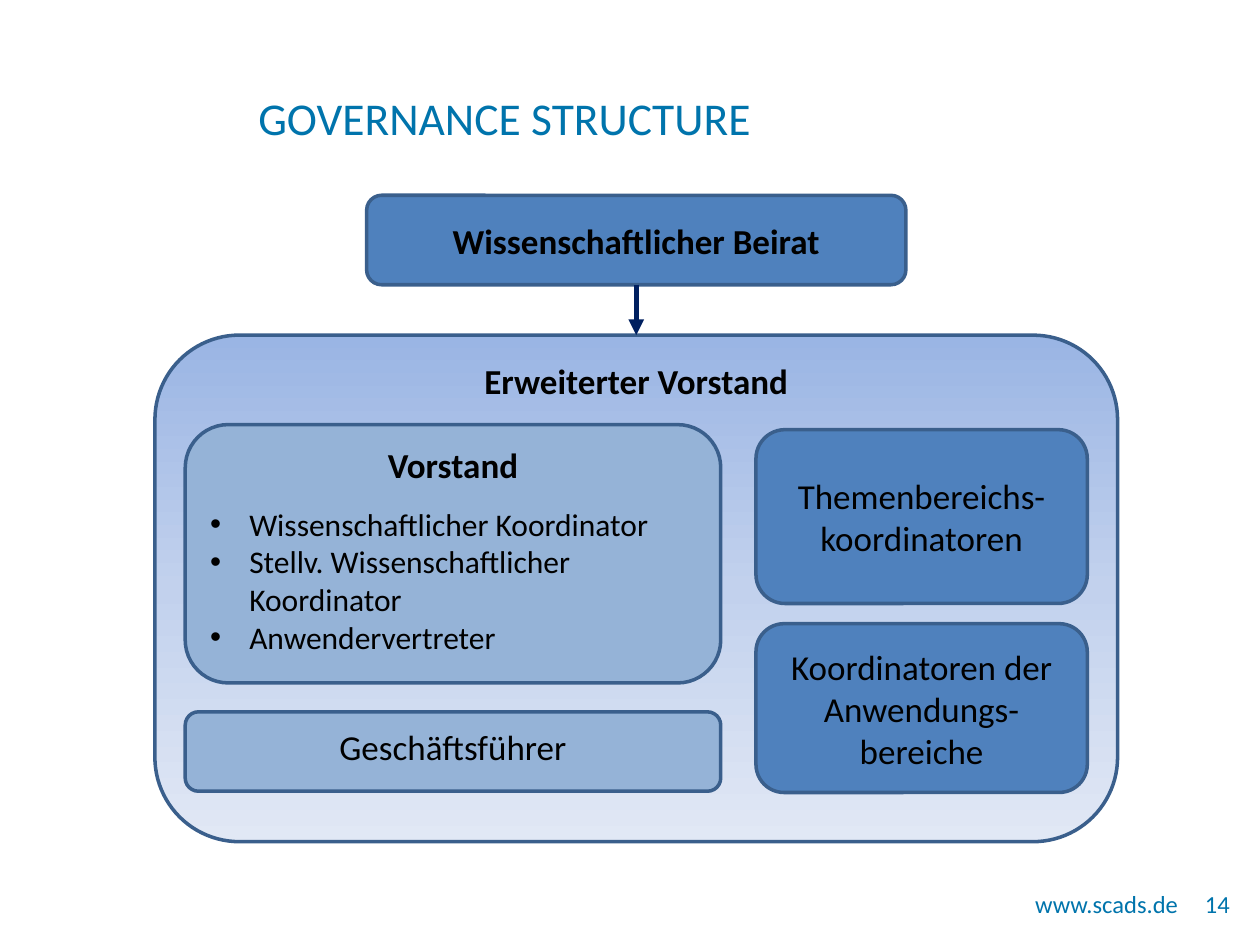
from copy import deepcopy
from dataclasses import dataclass

from lxml.etree import SubElement
from pptx import Presentation
from pptx.dml.color import RGBColor as RGB
from pptx.enum.shapes import MSO_CONNECTOR as CONNECTOR, MSO_SHAPE as SHAPE
from pptx.enum.text import MSO_ANCHOR as ANCHOR, PP_ALIGN as ALIGN
from pptx.oxml.ns import qn
from pptx.util import Inches, Pt


@dataclass(frozen=True)
class Theme:
    """Colours, font and type sizes of the slide."""
    font: str = "Calibri"
    accent: str = "0074AC"
    text: str = "000000"
    strong: str = "4F81BD"
    soft: str = "95B3D7"
    outline: str = "3A5F8C"
    arrow: str = "002060"
    gradient: tuple = ("9AB5E4", "C2D1ED", "E1E8F5")
    title_size: int = 26
    label_size: int = 20
    list_size: int = 18
    footer_size: int = 14


class SlideBuilder:
    """Draws styled elements on the current slide."""

    def __init__(self, slide, theme):
        """Keep the slide and its theme."""
        self.slide = slide
        self.theme = theme

    def set_frame(self, frame, anchor, insets):
        """Set wrapping, anchor and insets of a text frame."""
        left, top, right, bottom = map(Inches, insets)
        values = {"word_wrap": True, "vertical_anchor": anchor,
                  "margin_left": left, "margin_top": top,
                  "margin_right": right, "margin_bottom": bottom}
        for name, value in values.items():
            setattr(frame, name, value)

    def add_span(self, para, text, size, color, align, bold=False):
        """Fill a paragraph with one styled span."""
        para.alignment = align
        span = para.add_run()
        span.text = text
        values = {"name": self.theme.font, "size": Pt(size), "bold": bold}
        for name, value in values.items():
            setattr(span.font, name, value)
        span.font.color.rgb = RGB.from_string(color)

    def text(self, area, text, size, align=ALIGN.RIGHT):
        """Add accent text standing on the bottom of its area."""
        frame = self.slide.shapes.add_textbox(*map(Inches, area)).text_frame
        self.set_frame(frame, ANCHOR.BOTTOM, (0, 0, 0, 0))
        self.add_span(frame.paragraphs[0], text, size, self.theme.accent, align)

    def box(self, area, lines, fill, bold=False, anchor=ANCHOR.MIDDLE,
            insets=(0.1, 0.05, 0.1, 0.05)):
        """Add a rounded box with centred lines."""
        box = self.slide.shapes.add_shape(SHAPE.ROUNDED_RECTANGLE, *map(Inches, area))
        box.shadow.inherit = False
        box.line.color.rgb = RGB.from_string(self.theme.outline)
        box.line.width = Pt(2)
        if isinstance(fill, tuple):
            self.shade(box, fill)
        else:
            box.fill.solid()
            box.fill.fore_color.rgb = RGB.from_string(fill)
        frame = box.text_frame
        self.set_frame(frame, anchor, insets)
        for index, line in enumerate(lines):
            para = frame.add_paragraph() if index else frame.paragraphs[0]
            self.add_span(para, line, self.theme.label_size, self.theme.text,
                          ALIGN.CENTER, bold)
        return box

    def shade(self, box, colors):
        """Fill a box from top to bottom with three evenly spaced colours."""
        box.fill.gradient()
        box.fill.gradient_angle = 270
        stops = next(box.element.iter(qn("a:gsLst")))
        stops.insert(1, deepcopy(stops[0]))
        for index, (stop, color) in enumerate(zip(box.fill.gradient_stops, colors)):
            stop.position = index / 2
            stop.color.rgb = RGB.from_string(color)

    def bullets(self, box, items, gap):
        """Append a bulleted list to a box, a gap below its heading."""
        for index, item in enumerate(items):
            para = box.text_frame.add_paragraph()
            properties = para._p.get_or_add_pPr()
            properties.set("marL", str(Inches(0.31)))
            properties.set("indent", str(Inches(-0.31)))
            if index == 0:
                para.space_before = Pt(gap)
            SubElement(properties, qn("a:buFont"), typeface="Arial")
            SubElement(properties, qn("a:buChar"), char="•")
            self.add_span(para, item, self.theme.list_size, self.theme.text, ALIGN.LEFT)

    def arrow(self, upper, lower):
        """Join the bottom of one box to the top of another."""
        arrow = self.slide.shapes.add_connector(CONNECTOR.STRAIGHT, 0, 0, 0, 0)
        arrow.begin_connect(upper, 2)
        arrow.end_connect(lower, 0)
        arrow.line.color.rgb = RGB.from_string(self.theme.arrow)
        arrow.line.width = Pt(3)
        outline = next(arrow.element.iter(qn("a:ln")))
        SubElement(outline, qn("a:tailEnd"), type="triangle")
        SubElement(arrow.element.spPr, qn("a:effectLst"))


def main():
    """Build the governance slide."""
    deck = Presentation()
    deck.slide_width, deck.slide_height = Inches(10), Inches(7.5)
    theme = Theme()
    page = SlideBuilder(deck.slides.add_slide(deck.slide_layouts[6]), theme)

    page.text((2.05, 0.39, 7.31, 0.76), "GOVERNANCE STRUCTURE",
              theme.title_size, ALIGN.LEFT)
    page.text((6.99, 7.05, 2.36, 0.24), "www.scads.de", theme.footer_size)
    page.text((9.45, 6.82, 0.31, 0.47), "14", theme.footer_size)

    extended_board = page.box((1.23, 2.66, 7.64, 4.02), ["Erweiterter Vorstand"],
                              theme.gradient, True, ANCHOR.TOP, (0.1, 0, 0.1, 0.05))
    advisory_board = page.box((2.91, 1.55, 4.28, 0.71), ["Wissenschaftlicher Beirat"],
                              theme.strong, True)
    page.arrow(advisory_board, extended_board)

    left, left_width = 1.47, 4.25
    board = page.box((left, 3.37, left_width, 2.05), ["Vorstand"], theme.soft,
                     True, ANCHOR.TOP)
    page.bullets(board, ["Wissenschaftlicher Koordinator",
                         "Stellv. Wissenschaftlicher Koordinator",
                         "Anwendervertreter"], 11)
    page.box((left, 5.65, left_width, 0.63), ["Geschäftsführer"], theme.soft,
             anchor=ANCHOR.TOP, insets=(0.1, 0.08, 0.1, 0.05))

    right, right_width = 6, 2.63
    page.box((right, 3.41, right_width, 1.38),
             ["Themenbereichs-", "koordinatoren"], theme.strong)
    page.box((right, 4.95, right_width, 1.34),
             ["Koordinatoren der Anwendungs-", "bereiche"], theme.strong)

    deck.save("out.pptx")


if __name__ == "__main__":
    main()
